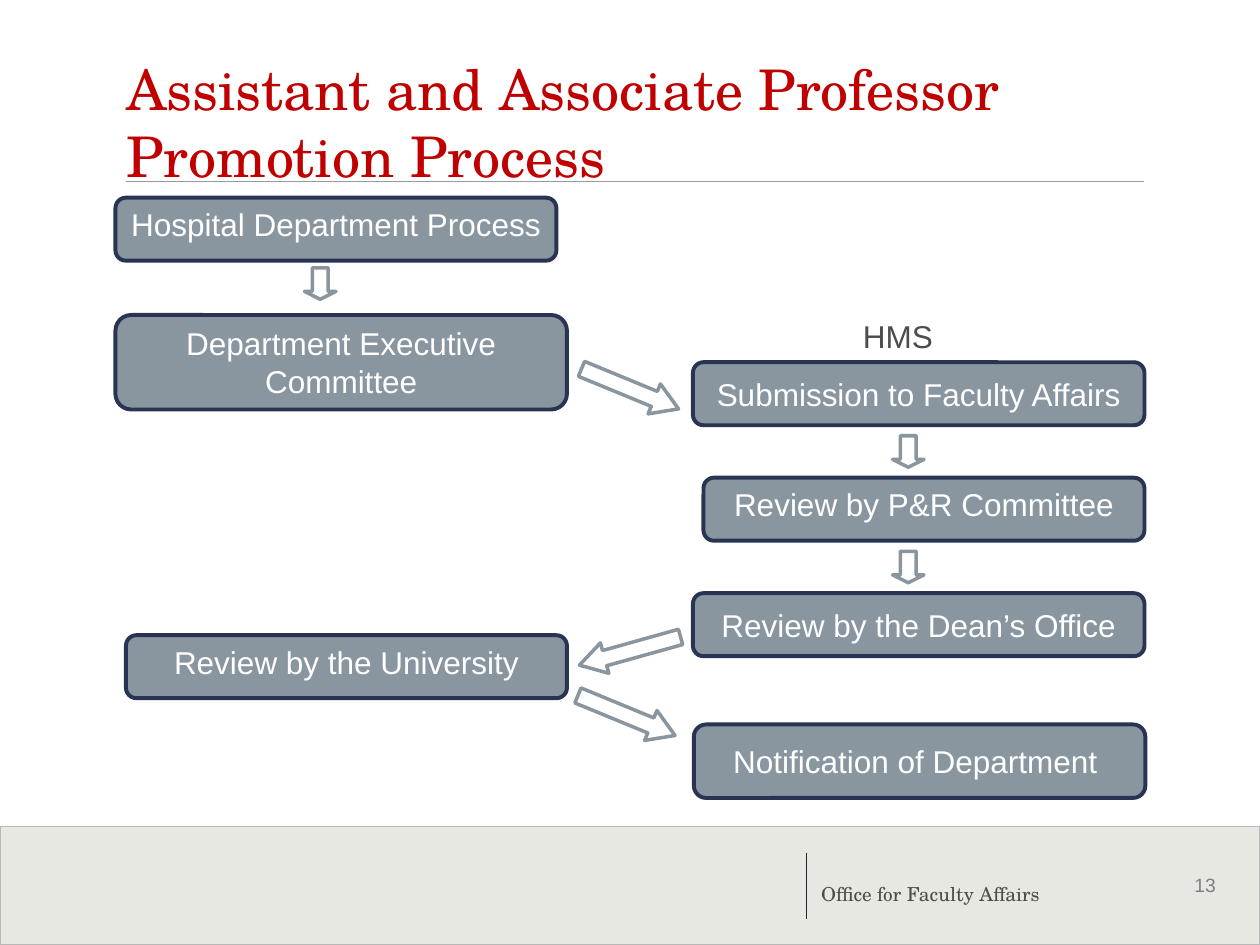
from dataclasses import dataclass

from lxml import etree
from pptx import Presentation
from pptx.dml.color import RGBColor
from pptx.enum.shapes import MSO_CONNECTOR, MSO_SHAPE
from pptx.enum.text import MSO_ANCHOR, MSO_AUTO_SIZE, PP_ALIGN
from pptx.oxml.ns import qn
from pptx.util import Pt


@dataclass(frozen=True)
class Theme:
    heading_font: str = "TeX Gyre Schola"
    body_font: str = "Arial"
    title_size: int = 32
    body_size: int = 18
    footer_size: int = 11
    title: str = "C00000"
    text: str = "4D4D4D"
    number: str = "7F7F7F"
    white: str = "FFFFFF"
    step: str = "8996A0"
    outline: str = "293352"
    band: str = "D3D3C9"
    band_line: str = "B8B8B8"
    rule: str = "999999"
    divider: str = "262626"


theme = Theme()


def style_text(frame, font, size, color, align=PP_ALIGN.LEFT):
    for para in frame.paragraphs:
        para.alignment = align
        for span in para.runs:
            span.font.name = font
            span.font.size = Pt(size)
            span.font.color.rgb = RGBColor.from_string(color)


def add_outlined(kind, left, top, width, height, line_color, line_width, fill=None):
    shape = page.shapes.add_shape(kind, Pt(left), Pt(top), Pt(width), Pt(height))
    shape.shadow.inherit = False
    if fill:
        shape.fill.solid()
        shape.fill.fore_color.rgb = RGBColor.from_string(fill)
    else:
        shape.fill.background()
    shape.line.color.rgb = RGBColor.from_string(line_color)
    shape.line.width = Pt(line_width)
    return shape


deck = Presentation()
deck.slide_width, deck.slide_height = Pt(720), Pt(540)
page = deck.slides.add_slide(deck.slide_layouts[5])

# Footer band, half transparent
band = add_outlined(MSO_SHAPE.RECTANGLE, 0, 472.3, 720, 67.7,
                    theme.band_line, 0.75, theme.band)
band_color = band.fill._xPr.find(qn("a:solidFill"))[0]
etree.SubElement(band_color, qn("a:alpha")).set("val", "50000")

# Footer divider and rule under the title
for x1, y1, x2, y2, color in [
    (460.8, 487.4, 460.8, 524.9, theme.divider),
    (72, 103.7, 653.8, 103.7, theme.rule),
]:
    line = page.shapes.add_connector(MSO_CONNECTOR.STRAIGHT, Pt(x1), Pt(y1), Pt(x2), Pt(y2))
    line.line.color.rgb = RGBColor.from_string(color)
    line.line.width = Pt(0.75)
    etree.SubElement(line._element.spPr, qn("a:effectLst"))

# Title
title = page.shapes.title
title.left, title.top, title.width, title.height = Pt(72), Pt(21.6), Pt(582), Pt(90)
frame = title.text_frame
frame.text = "Assistant and Associate Professor Promotion Process"
frame.word_wrap = True
frame.auto_size = MSO_AUTO_SIZE.NONE
frame.vertical_anchor = MSO_ANCHOR.BOTTOM
frame.margin_left = 0
style_text(frame, theme.heading_font, theme.title_size, theme.title)

# Free text: slide number, office name, column label
for text, left, top, width, height, anchor, font, size, color in [
    ("13", 675.4, 494.6, 44, 22, MSO_ANCHOR.MIDDLE,
     theme.body_font, theme.footer_size, theme.number),
    ("Office for Faculty Affairs", 462.2, 487.4, 201.6, 33.8, MSO_ANCHOR.BOTTOM,
     theme.heading_font, theme.footer_size, theme.text),
    ("HMS", 486, 177.4, 78, 28.8, MSO_ANCHOR.MIDDLE,
     theme.body_font, theme.body_size, theme.text),
]:
    box = page.shapes.add_textbox(Pt(left), Pt(top), Pt(width), Pt(height))
    frame = box.text_frame
    frame.word_wrap = True
    frame.vertical_anchor = anchor
    frame.text = text
    style_text(frame, font, size, color)

# Process steps; lift raises the label above the middle of its box
for text, left, top, width, height, lift in [
    ("Hospital Department Process", 66, 113, 252, 36, 3),
    ("Department Executive\nCommittee", 66, 180, 258, 54, 0),
    ("Submission to Faculty Affairs", 396, 207, 258, 36, 0),
    ("Review by P&R Committee", 402, 273, 252, 36, 3),
    ("Review by the Dean’s Office", 396, 339, 258, 36, 0),
    ("Review by the University", 72, 363, 252, 36, 3),
    ("Notification of Department ", 396.5, 414, 258, 42, 0),
]:
    step = add_outlined(MSO_SHAPE.ROUNDED_RECTANGLE, left, top, width, height,
                        theme.outline, 2.25, theme.step)
    frame = step.text_frame
    frame.word_wrap = False
    frame.vertical_anchor = MSO_ANCHOR.MIDDLE
    frame.margin_top, frame.margin_bottom = Pt(3.6), Pt(3.6 + 2 * lift)
    frame.text = text
    style_text(frame, theme.body_font, theme.body_size, theme.white, PP_ALIGN.CENTER)

# Block arrows between the steps
down, right = MSO_SHAPE.DOWN_ARROW, MSO_SHAPE.RIGHT_ARROW
for kind, left, top, width, height, head, angle in [
    (down, 174, 153, 18, 18, 0.25, 0),
    (down, 510, 249, 18, 18, 0.25, 0),
    (down, 510, 315, 18, 18, 0.25, 0),
    (right, 330, 213, 60, 18.5, 0.81, 22.4),
    (right, 330, 363, 60, 18, 0.83, 164.4),
    (right, 328, 399.6, 60, 18.5, 0.81, 22.4),
]:
    arrow = add_outlined(kind, left, top, width, height, theme.step, 2)
    arrow.adjustments[0] = 0.5
    arrow.adjustments[1] = head
    arrow.rotation = angle

deck.save("out.pptx")
